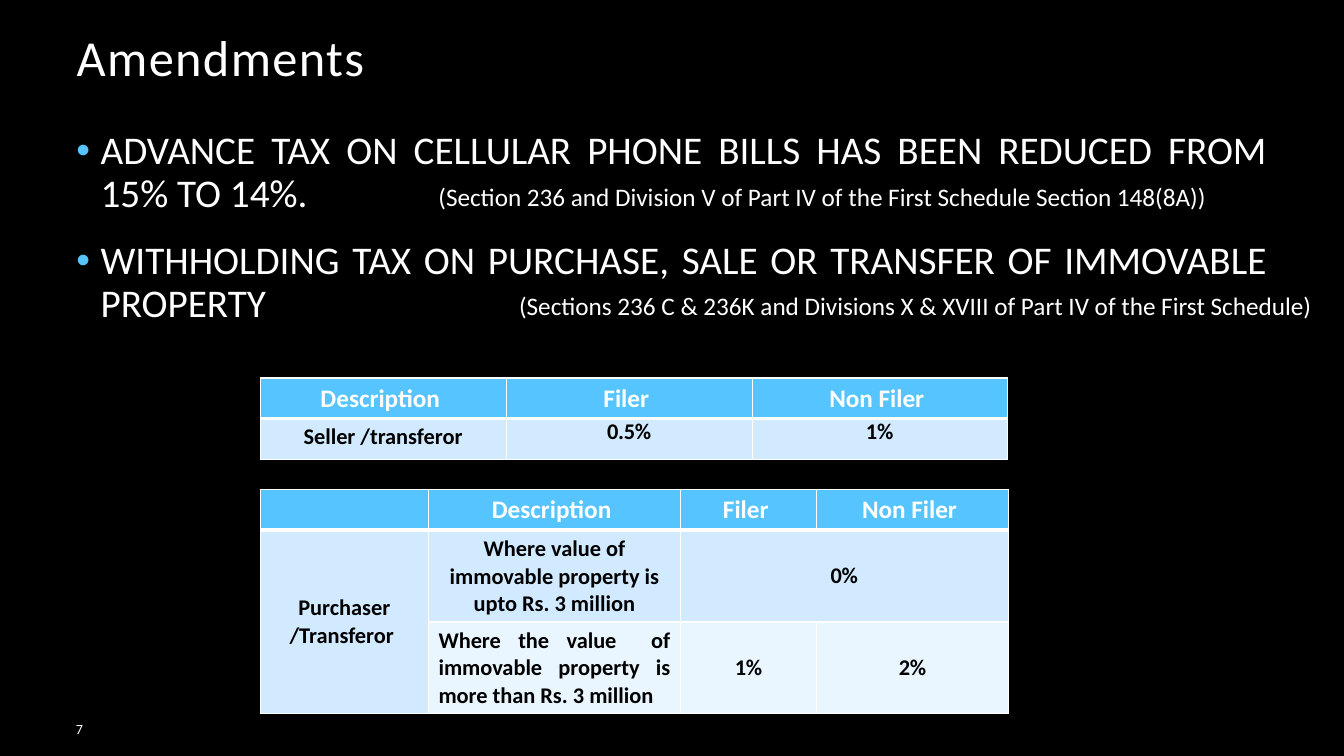
"""Build the slide on amendments to advance and withholding tax."""
from dataclasses import dataclass

from lxml import etree
from pptx import Presentation
from pptx.dml.color import RGBColor
from pptx.enum.text import MSO_ANCHOR, MSO_AUTO_SIZE, PP_ALIGN
from pptx.oxml.ns import qn
from pptx.util import Inches, Pt

LEFT, CENTER, RIGHT, JUSTIFY = PP_ALIGN.LEFT, PP_ALIGN.CENTER, PP_ALIGN.RIGHT, PP_ALIGN.JUSTIFY
TOP, MIDDLE, BOTTOM = MSO_ANCHOR.TOP, MSO_ANCHOR.MIDDLE, MSO_ANCHOR.BOTTOM
NO_AUTOFIT = MSO_AUTO_SIZE.NONE

BLACK = RGBColor(0x00, 0x00, 0x00)
WHITE = RGBColor(0xFF, 0xFF, 0xFF)
SKY = RGBColor(0x56, 0xC5, 0xFF)
PALE = RGBColor(0xD1, 0xEA, 0xFF)
PALEST = RGBColor(0xE9, 0xF5, 0xFF)

FONT = "Calibri"
TABLE_LEFT = 2.58
BAND_FILLS = (SKY, PALE, PALEST)


@dataclass(frozen=True)
class Label:
    text: str
    left: float
    top: float
    width: float
    height: float
    size: int
    align: PP_ALIGN = LEFT
    anchor: MSO_ANCHOR = TOP
    wrap: bool = False


@dataclass(frozen=True)
class Entry:
    text: str
    anchor: MSO_ANCHOR = TOP
    align: PP_ALIGN = CENTER
    is_rate: bool = False
    rows: int = 1
    columns: int = 1


@dataclass(frozen=True)
class RateTable:
    top: float
    column_widths: tuple[float, ...]
    row_heights: tuple[float, ...]
    rows: tuple[tuple[Entry | None, ...], ...]


AMENDMENTS = (
    "ADVANCE TAX ON CELLULAR PHONE BILLS HAS BEEN REDUCED FROM 15% TO 14%.",
    "WITHHOLDING TAX ON PURCHASE, SALE OR TRANSFER OF IMMOVABLE PROPERTY",
)
LABELS = (
    Label("7", 0, 7.08, 0.92, 0.3, 10, RIGHT, MIDDLE, True),
    Label("(Section 236 and Division V of Part IV of the First Schedule Section 148(8A))",
          4.25, 1.75, 7.9, 0.4, 18),
    Label("(Sections 236 C & 236K and Divisions X & XVIII of Part IV of the First Schedule)",
          5.05, 2.83, 8.2, 0.4, 18),
)
HEADINGS = (Entry("Description "), Entry("Filer "), Entry("Non Filer "))
SELLER_RATES = RateTable(3.75, (2.44, 2.44, 2.53), (0.4, 0.41), (
    HEADINGS,
    (Entry("Seller /transferor"), Entry("0.5%", is_rate=True), Entry("1%", is_rate=True)),
))
PURCHASER_RATES = RateTable(4.86, (1.67, 2.5, 1.35, 1.9), (0.4, 0.91, 0.91), (
    (None, *HEADINGS),
    (Entry("Purchaser /Transferor ", MIDDLE, rows=2),
     Entry("Where value of immovable property is upto Rs. 3 million"),
     Entry("0%", MIDDLE, is_rate=True, columns=2), None),
    (None, Entry("Where the value  of immovable property is more than Rs. 3 million", align=JUSTIFY),
     Entry("1%", MIDDLE, is_rate=True), Entry("2%", MIDDLE, is_rate=True)),
))


def style(paragraph, size: int, color: RGBColor = WHITE, bold: bool = False,
          spacing: float = 0) -> None:
    font = paragraph.font
    font.name, font.size, font.bold = FONT, Pt(size), bold
    font.color.rgb = color
    if spacing:
        paragraph._p.pPr.find(qn("a:defRPr")).set("spc", str(round(spacing * 100)))


def add_title(slide, text: str) -> None:
    title = slide.shapes.title
    title.left, title.top = Inches(0.66), Inches(-0.58)
    title.width, title.height = Inches(10), Inches(1.5)
    frame = title.text_frame
    frame.text = text
    frame.auto_size = NO_AUTOFIT
    frame.vertical_anchor = BOTTOM
    heading = frame.paragraphs[0]
    heading.alignment, heading.line_spacing = LEFT, 0.9
    style(heading, 36, spacing=1)


def add_bullet(paragraph) -> None:
    properties = paragraph._p.get_or_add_pPr()
    properties.set("marL", str(Inches(0.24)))
    properties.set("indent", str(Inches(-0.24)))
    bullet_color = etree.SubElement(properties, qn("a:buClr"))
    etree.SubElement(bullet_color, qn("a:srgbClr"), val=str(SKY))
    etree.SubElement(properties, qn("a:buFont"), typeface="Arial")
    etree.SubElement(properties, qn("a:buChar"), char="•")


def add_amendments(slide) -> None:
    body = slide.shapes.add_textbox(Inches(0.66), Inches(1.25), Inches(12), Inches(5.33))
    frame = body.text_frame
    frame.word_wrap = True
    for index, amendment in enumerate(AMENDMENTS):
        paragraph = frame.add_paragraph() if index else frame.paragraphs[0]
        paragraph.text = amendment
        add_bullet(paragraph)
        paragraph.alignment, paragraph.line_spacing = JUSTIFY, 0.9
        if index:
            paragraph.space_before = Pt(18)
        style(paragraph, 28)


def add_label(slide, label: Label) -> None:
    box = slide.shapes.add_textbox(Inches(label.left), Inches(label.top),
                                   Inches(label.width), Inches(label.height))
    frame = box.text_frame
    frame.word_wrap = label.wrap
    frame.vertical_anchor = label.anchor
    paragraph = frame.paragraphs[0]
    paragraph.text = label.text
    paragraph.alignment = label.align
    style(paragraph, label.size)


def add_borders(cell, bottom_width: int) -> None:
    properties = cell._tc.get_or_add_tcPr()
    for side, width in (("L", 1), ("R", 1), ("T", 1), ("B", bottom_width)):
        line = etree.SubElement(properties, qn(f"a:ln{side}"), w=str(Pt(width)))
        fill = etree.SubElement(line, qn("a:solidFill"))
        etree.SubElement(fill, qn("a:srgbClr"), val=str(WHITE))


def fill_entry(cell, entry: Entry, is_heading: bool) -> None:
    cell.vertical_anchor = entry.anchor
    if entry.is_rate:
        cell.margin_left = cell.margin_right = Inches(0.07)
        cell.margin_top = cell.margin_bottom = 0
    paragraph = cell.text_frame.paragraphs[0]
    paragraph.text = entry.text
    paragraph.alignment = entry.align
    style(paragraph, 18 if is_heading else 16, WHITE if is_heading else BLACK, True,
          -0.2 if entry.is_rate else 0)


def add_rate_table(slide, rates: RateTable) -> None:
    table = slide.shapes.add_table(
        len(rates.row_heights), len(rates.column_widths), Inches(TABLE_LEFT), Inches(rates.top),
        Inches(sum(rates.column_widths)), Inches(sum(rates.row_heights))).table
    for column, width in zip(table.columns, rates.column_widths):
        column.width = Inches(width)
    for row, height in zip(table.rows, rates.row_heights):
        row.height = Inches(height)
    for r, entries in enumerate(rates.rows):
        for c, entry in enumerate(entries):
            cell = table.cell(r, c)
            add_borders(cell, 1 if r else 3)
            cell.fill.solid()
            cell.fill.fore_color.rgb = BAND_FILLS[r]
            if entry is None:
                continue
            fill_entry(cell, entry, r == 0)
            if entry.rows > 1 or entry.columns > 1:
                cell.merge(table.cell(r + entry.rows - 1, c + entry.columns - 1))


def main() -> None:
    presentation = Presentation()
    presentation.slide_width, presentation.slide_height = Inches(13.33), Inches(7.5)
    slide = presentation.slides.add_slide(presentation.slide_layouts[5])
    slide.background.fill.solid()
    slide.background.fill.fore_color.rgb = BLACK
    add_title(slide, "Amendments")
    add_amendments(slide)
    for rates in (SELLER_RATES, PURCHASER_RATES):
        add_rate_table(slide, rates)
    for label in LABELS:
        add_label(slide, label)
    presentation.save("out.pptx")


if __name__ == "__main__":
    main()
